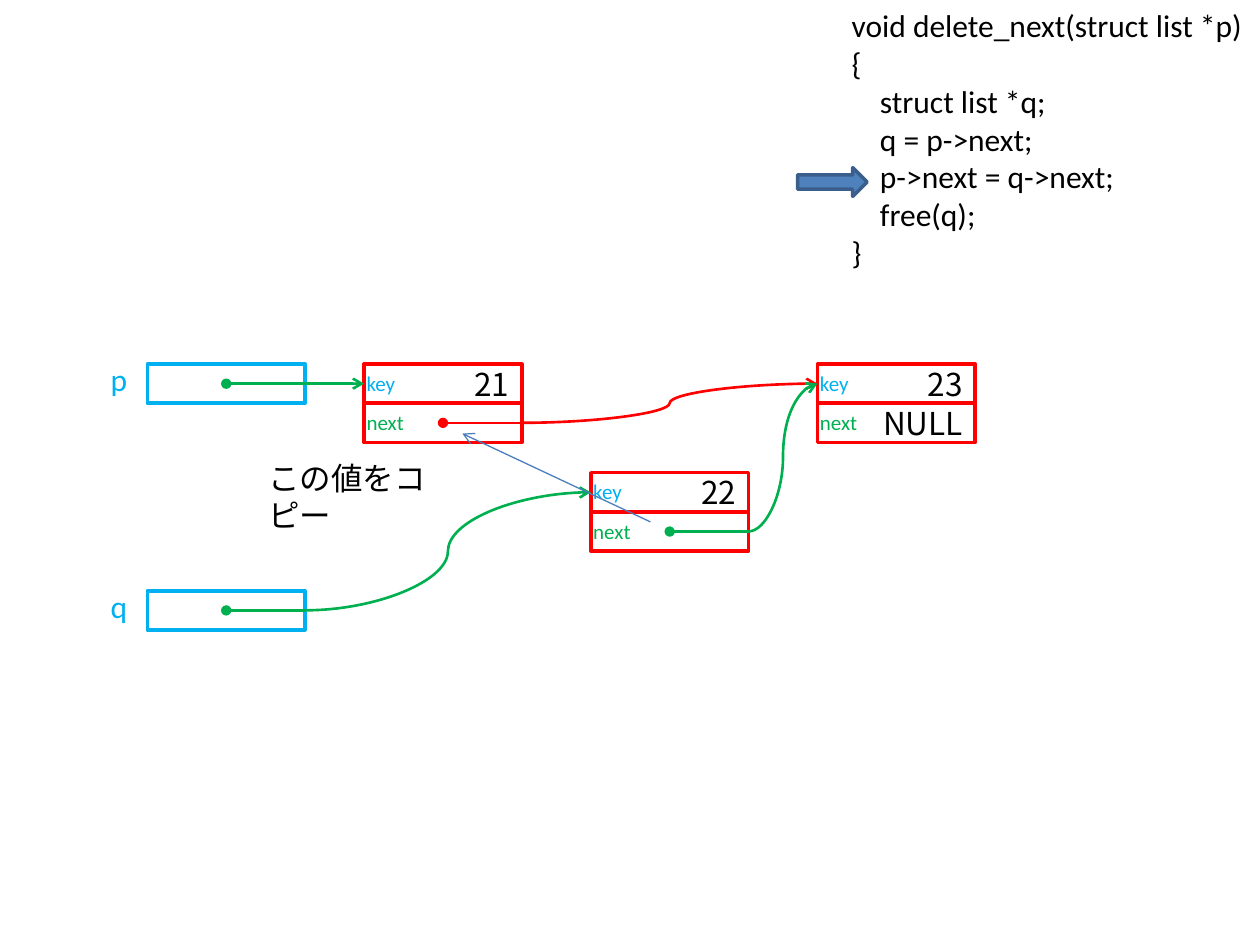
import pptx
import pptx.dml.color
import pptx.enum.shapes
import pptx.enum.text
import pptx.oxml
import pptx.oxml.ns
import pptx.util

Cm = pptx.util.Cm
Pt = pptx.util.Pt
Color = pptx.dml.color.RGBColor
Shape = pptx.enum.shapes.MSO_SHAPE
Link = pptx.enum.shapes.MSO_CONNECTOR
Align = pptx.enum.text.PP_ALIGN
Anchor = pptx.enum.text.MSO_ANCHOR
Fit = pptx.enum.text.MSO_AUTO_SIZE

BLACK = Color(0x00, 0x00, 0x00)
RED = Color(0xFF, 0x00, 0x00)
GREEN = Color(0x00, 0xB0, 0x50)
SKY = Color(0x00, 0xB0, 0xF0)
BLUE = Color(0x4F, 0x81, 0xBD)
NAVY = Color(0x3A, 0x5F, 0x8C)
STEEL = Color(0x4B, 0x7E, 0xBC)

LATIN = "Calibri"
CJK = "Noto Sans CJK JP"

WIDE, HIGH = 3.18, 0.79
COLS = [2.97 + 4.57 * i - (0.2 if i else 0) for i in range(4)]
TOP, MID, LOW = 7.34, 9.53, 11.91

CODE = """void delete_next(struct list *p)
{
struct list *q;
q = p->next;
p->next = q->next;
free(q);
}"""


def write(frame, text, font=LATIN, size=18, color=BLACK, align=Align.LEFT, inset=()):
    for i, line in enumerate(text.split("\n")):
        para = frame.add_paragraph() if i else frame.paragraphs[0]
        para.alignment = align
        if i in inset:
            para._p.get_or_add_pPr().set("marL", str(Cm(0.57)))
        run = para.add_run()
        run.text = line
        run.font.name = font
        run.font.size = Pt(size)
        run.font.color.rgb = color


class Deck:
    def __init__(self):
        self.show = pptx.Presentation()
        self.show.slide_width = Cm(25.4)
        self.show.slide_height = Cm(19.05)
        self.slide = self.show.slides.add_slide(self.show.slide_layouts[6])

    def shape(self, kind, x, y, w, h, line, fill=None):
        item = self.slide.shapes.add_shape(kind, Cm(x), Cm(y), Cm(w), Cm(h))
        item.shadow.inherit = False
        if fill is None:
            item.fill.background()
        else:
            item.fill.solid()
            item.fill.fore_color.rgb = fill
        item.line.color.rgb = line
        item.line.width = Pt(2)
        return item

    def cell(self, x, y, line, text=""):
        frame = self.shape(Shape.RECTANGLE, x, y, WIDE, HIGH, line).text_frame
        frame.vertical_anchor = Anchor.MIDDLE
        if text:
            write(frame, text, font=CJK, align=Align.RIGHT)

    def label(self, x, y, w, h, text, wrap=True, **style):
        box = self.slide.shapes.add_textbox(Cm(x), Cm(y), Cm(w), Cm(h))
        box.text_frame.word_wrap = wrap
        box.text_frame.auto_size = Fit.SHAPE_TO_FIT_TEXT
        write(box.text_frame, text, **style)

    def link(self, start, end, color, kind=Link.STRAIGHT, width=1.5, **ends):
        points = [Cm(v) for v in (*start, *end)]
        item = self.slide.shapes.add_connector(kind, *points)
        item.line.color.rgb = color
        item.line.width = Pt(width)
        line = item.line._get_or_add_ln()
        for tag in ("headEnd", "tailEnd"):
            if tag in ends:
                mark = pptx.oxml.parse_xml(
                    f'<a:{tag} {pptx.oxml.ns.nsdecls("a")} type="{ends[tag]}"/>')
                line.append(mark)
        item._element.spPr.append(pptx.oxml.parse_xml(
            f'<a:effectLst {pptx.oxml.ns.nsdecls("a")}/>'))

    def node(self, x, y, key, after=""):
        self.cell(x, y + HIGH, RED, after)
        self.cell(x, y, RED, key)
        self.label(x - 0.2, y, 1.6, 0.76, "key", size=12, color=SKY)
        self.label(x - 0.2, y + HIGH, 1.6, 0.76, "next", size=12, color=GREEN)

    def root(self, y, name):
        self.cell(COLS[0], y, SKY)
        self.label(1.98, y - 0.2, 1.22, 1.02, name, color=SKY)

    def point(self, x, y, end, color):
        y += HIGH / 2
        edge = x + WIDE
        self.link((x + WIDE / 2, y), (edge, y), color, headEnd="oval")
        self.link((edge, y), (end[0], end[1] + HIGH / 2), color,
                  kind=Link.CURVE, tailEnd="arrow")


def main():
    deck = Deck()
    root, first, second, third = COLS
    deck.root(TOP, "p")
    deck.root(LOW, "q")
    deck.node(first, TOP, "21")
    deck.node(second, MID, "22")
    deck.node(third, TOP, "23", "NULL")

    deck.point(root, TOP, (first, TOP), GREEN)
    deck.point(first, TOP + HIGH, (third, TOP), RED)
    deck.point(second, MID + HIGH, (third, TOP), GREEN)
    deck.point(root, LOW, (second, MID), GREEN)

    deck.label(16.92, 0, 8.48, 6.4, CODE, wrap=False, inset=range(2, 6))
    deck.shape(Shape.RIGHT_ARROW, 16.08, 3.38, 1.4, 0.58, NAVY, BLUE)
    deck.link((13.11, 10.52), (9.32, 8.74), STEEL, width=0.75, tailEnd="arrow")
    deck.label(5.16, 9.12, 4.52, 1.02, "この値をコピー")
    deck.show.save("out.pptx")


if __name__ == "__main__":
    main()
